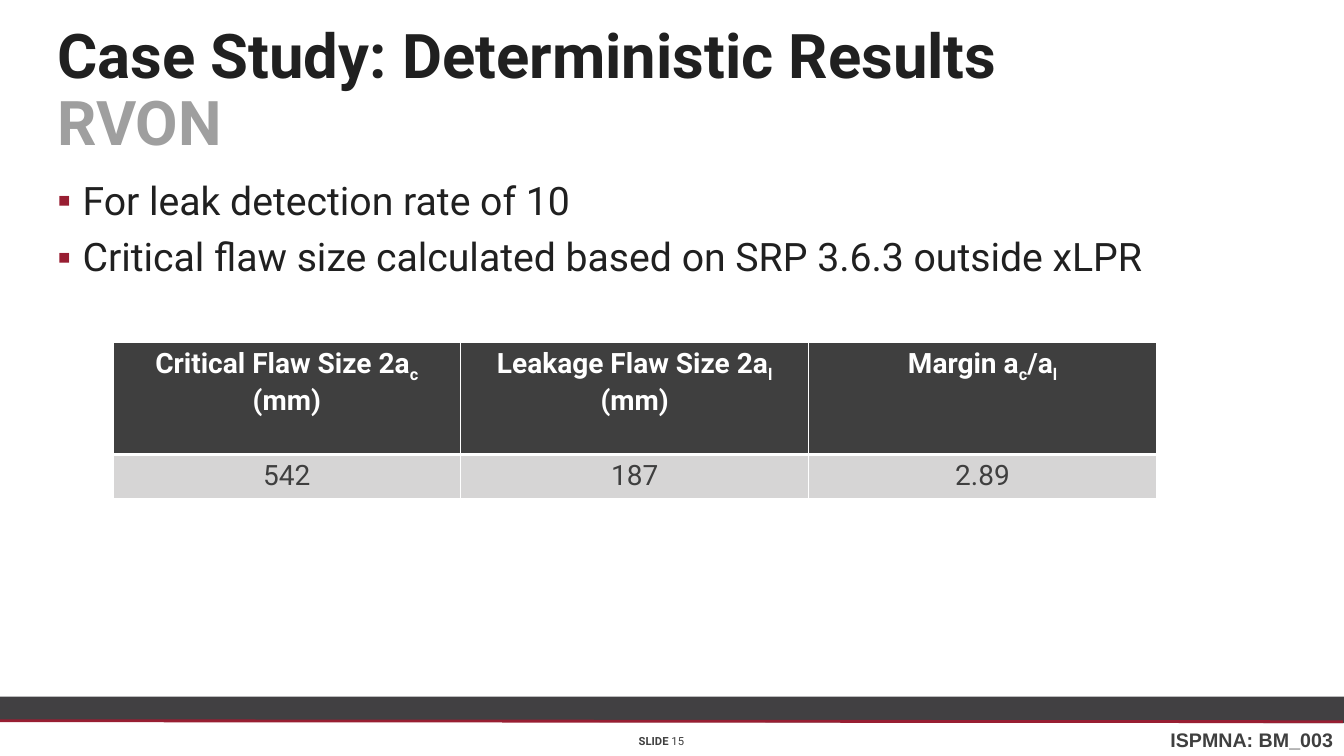
from lxml.etree import SubElement
from pptx import Presentation
from pptx.dml.color import RGBColor
from pptx.enum.shapes import MSO_CONNECTOR, MSO_SHAPE
from pptx.enum.text import MSO_ANCHOR, PP_ALIGN
from pptx.oxml.ns import qn
from pptx.util import Inches, Pt

INK = RGBColor(0x20, 0x20, 0x20)
MUTED = RGBColor(0x9F, 0x9F, 0x9F)
CHARCOAL = RGBColor(0x3F, 0x3F, 0x3F)
BAR_GRAY = RGBColor(0x41, 0x40, 0x42)
CRIMSON = RGBColor(0x98, 0x1E, 0x32)
ROW_GRAY = RGBColor(0xD6, 0xD5, 0xD5)
WHITE = RGBColor(0xFF, 0xFF, 0xFF)

SUBSCRIPT = {"baseline": -25}


def add_run(paragraph, text, size, color, font="Roboto", bold=False, baseline=0):
    run = paragraph.add_run()
    run.text = text
    run.font.name = font
    run.font.size = Pt(size)
    run.font.bold = bold
    run.font.color.rgb = color
    if baseline:
        run._r.get_or_add_rPr().set("baseline", f"{baseline * 1000}")


def add_bullet(paragraph):
    properties = paragraph._p.get_or_add_pPr()
    properties.set("marL", str(Inches(0.25)))
    properties.set("indent", str(-Inches(0.25)))
    bullet_color = SubElement(properties, qn("a:buClr"))
    SubElement(bullet_color, qn("a:srgbClr"), val=str(CRIMSON))
    SubElement(properties, qn("a:buFont"), typeface="Arial")
    SubElement(properties, qn("a:buChar"), char="▪")


def set_borders(cell, widths):
    """Draw white cell edges; widths maps an edge letter (L, R, T, B) to points."""
    properties = cell._tc.get_or_add_tcPr()
    for edge, width in widths.items():
        line = SubElement(properties, qn(f"a:ln{edge}"), w=str(Pt(width)))
        fill = SubElement(line, qn("a:solidFill"))
        SubElement(fill, qn("a:srgbClr"), val=str(WHITE))


class ResultsSlide:
    """Holds the current slide and its shared style."""

    def __init__(self, presentation):
        self.shapes = presentation.slides.add_slide(presentation.slide_layouts[6]).shapes

    def bar(self, left, top, width, height, color):
        bar = self.shapes.add_shape(
            MSO_SHAPE.RECTANGLE, Inches(left), Inches(top), Inches(width), Inches(height))
        bar.shadow.inherit = False
        bar.fill.solid()
        bar.fill.fore_color.rgb = color
        bar.line.fill.background()

    def rule(self, start, end, color, width=2):
        rule = self.shapes.add_connector(
            MSO_CONNECTOR.STRAIGHT, *(Inches(value) for value in start + end))
        rule.line.color.rgb = color
        rule.line.width = Pt(width)
        SubElement(rule._element.spPr, qn("a:effectLst"))

    def text(self, left, top, width, height, paragraphs, wrap=True, bulleted=False,
             anchor=MSO_ANCHOR.TOP, align=PP_ALIGN.LEFT, line_spacing=1.0,
             space_before=0, **style):
        """Each paragraph is a list of (text, format overrides) runs; "\\n" breaks a line."""
        box = self.shapes.add_textbox(
            Inches(left), Inches(top), Inches(width), Inches(height))
        frame = box.text_frame
        frame.word_wrap = wrap
        frame.vertical_anchor = anchor
        for index, runs in enumerate(paragraphs):
            paragraph = frame.add_paragraph() if index else frame.paragraphs[0]
            if bulleted:
                add_bullet(paragraph)
            paragraph.alignment = align
            paragraph.line_spacing = line_spacing
            if index:
                paragraph.space_before = Pt(space_before)
            for text, overrides in runs:
                if text == "\n":
                    paragraph.add_line_break()
                else:
                    add_run(paragraph, text, **{**style, **overrides})

    def table(self, left, top, column_width, row_heights, rows):
        table = self.shapes.add_table(
            len(rows), len(rows[0]), Inches(left), Inches(top),
            Inches(column_width * len(rows[0])), Inches(sum(row_heights))).table
        for column in table.columns:
            column.width = Inches(column_width)
        for r, (height, row) in enumerate(zip(row_heights, rows)):
            table.rows[r].height = Inches(height)
            header = r == 0
            edges = {"L": 1, "R": 1, "T": 1 if header else 3, "B": 3 if header else 1}
            for c, runs in enumerate(row):
                cell = table.cell(r, c)
                set_borders(cell, edges)
                cell.fill.solid()
                cell.fill.fore_color.rgb = CHARCOAL if header else ROW_GRAY
                paragraph = cell.text_frame.paragraphs[0]
                paragraph.alignment = PP_ALIGN.CENTER
                for text, overrides in runs:
                    add_run(paragraph, text, size=20, bold=header,
                            color=WHITE if header else CHARCOAL, **overrides)


def main():
    presentation = Presentation()
    presentation.slide_width = Inches(13.33)
    presentation.slide_height = Inches(7.5)
    slide = ResultsSlide(presentation)

    slide.bar(0, 6.91, 13.33, 0.25, BAR_GRAY)
    slide.rule((0, 7.14), (13.33, 7.16), BAR_GRAY)
    slide.rule((0, 7.15), (13.32, 7.16), CRIMSON)
    slide.text(11.51, 7.17, 1.83, 0.34, [[("ISPMNA: BM_003", {})]], wrap=False,
               size=14, font="Arial", color=CHARCOAL, bold=True)

    slide.text(0.47, 0.15, 12.45, 1.53,
               [[("Case Study: Deterministic Results", {}), ("\n", {}),
                 ("RVON", {"color": MUTED})]],
               anchor=MSO_ANCHOR.MIDDLE, line_spacing=0.9, size=44, color=INK, bold=True)
    slide.text(0.47, 1.75, 12.45, 4.58,
               [[("For leak detection rate of 10", {})],
                [("Critical flaw size calculated based on SRP 3.6.3 outside xLPR", {})]],
               bulleted=True, line_spacing=0.9, space_before=10, size=28, color=INK)
    slide.text(6.1, 7.24, 0.92, 0.22, [[("SLIDE ", {"bold": True}), ("15", {})]],
               align=PP_ALIGN.CENTER, size=8, color=CHARCOAL)

    headings = [
        [("Critical Flaw Size 2a", {}), ("c ", SUBSCRIPT), ("(mm)", {})],
        [("Leakage Flaw Size 2a", {}), ("l ", SUBSCRIPT), ("(mm)", {})],
        [("Margin a", {}), ("c", SUBSCRIPT), ("/a", {}), ("l", SUBSCRIPT)],
    ]
    results = [[(value, {})] for value in ("542", "187", "2.89")]
    slide.table(1.12, 3.4, 3.45, (1.11, 0.42), [headings, results])

    presentation.save("out.pptx")


if __name__ == "__main__":
    main()
